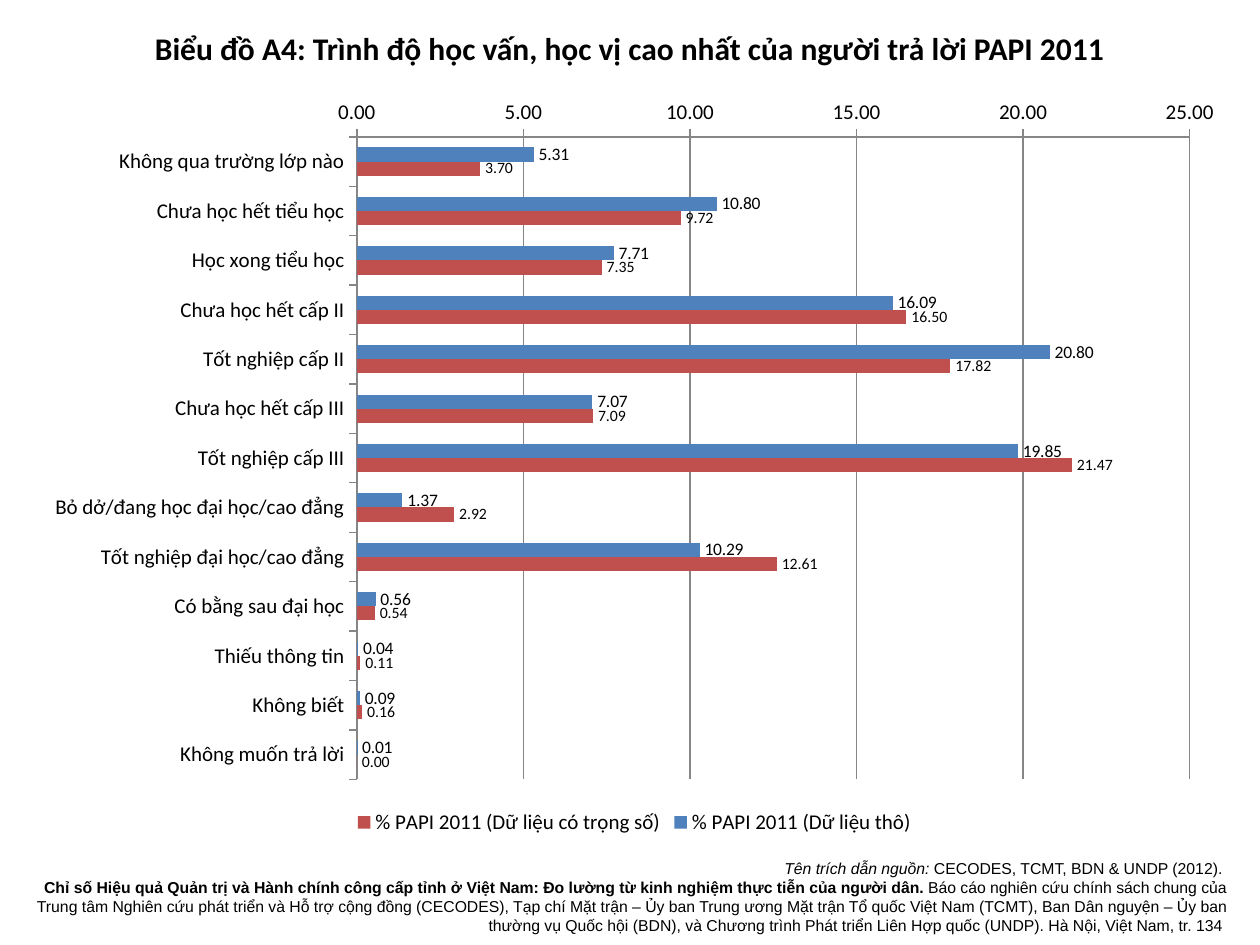
from lxml import etree
from pptx import Presentation
from pptx.chart.data import CategoryChartData
from pptx.dml.color import RGBColor
from pptx.enum.chart import XL_CHART_TYPE as CT, XL_LABEL_POSITION as LP
from pptx.enum.chart import XL_LEGEND_POSITION as LEG, XL_TICK_MARK as TM
from pptx.enum.text import MSO_AUTO_SIZE, PP_ALIGN
from pptx.oxml import parse_xml
from pptx.oxml.ns import nsdecls, qn
from pptx.util import Emu, Pt

PX = 914400 // 126
COLORS = {"text": "000000", "raw": "4F81BD", "weighted": "C0504D", "axis": "868686"}


def color(name):
    return RGBColor.from_string(COLORS[name])


def add_text(box, size, font, align, runs):
    s = slide.shapes.add_textbox(*[Emu(v * PX) for v in box])
    tf = s.text_frame
    tf.word_wrap = True
    tf.auto_size = MSO_AUTO_SIZE.SHAPE_TO_FIT_TEXT
    p = tf.paragraphs[0]
    p.alignment = align
    p.font.size = Pt(size)
    p.font.name = font
    p.font.color.rgb = color("text")
    for text, bold, italic, line_break in runs:
        r = p.add_run()
        r.text = text
        r.font.bold = bold
        r.font.italic = italic
        if line_break:
            p.add_line_break()


prs = Presentation()
prs.slide_width = Emu(1260 * PX)
prs.slide_height = Emu(945 * PX)
slide = prs.slides.add_slide(prs.slide_layouts[6])

add_text((84, 23, 1092, 50), 18, "Calibri", PP_ALIGN.CENTER, [
    ("Biểu đồ A4: Trình độ học vấn, học vị cao nhất của người trả lời PAPI 2011", True, False, False),
])

rows = [
    ("Không qua trường lớp nào", 5.31, 3.70),
    ("Chưa học hết tiểu học", 10.80, 9.72),
    ("Học xong tiểu học", 7.71, 7.35),
    ("Chưa học hết cấp II", 16.09, 16.50),
    ("Tốt nghiệp cấp II", 20.80, 17.82),
    ("Chưa học hết cấp III", 7.07, 7.09),
    ("Tốt nghiệp cấp III", 19.85, 21.47),
    ("Bỏ dở/đang học đại học/cao đẳng", 1.37, 2.92),
    ("Tốt nghiệp đại học/cao đẳng", 10.29, 12.61),
    ("Có bằng sau đại học", 0.56, 0.54),
    ("Thiếu thông tin", 0.04, 0.11),
    ("Không biết", 0.09, 0.16),
    ("Không muốn trả lời", 0.01, 0.00),
]
levels, raw, weighted = zip(*rows)
data = CategoryChartData(number_format="0.00")
data.categories = levels
data.add_series("% PAPI 2011 (Dữ liệu thô)", raw)
data.add_series("% PAPI 2011 (Dữ liệu có trọng số)", weighted)

chart_box = [Emu(v * PX) for v in (31, 84, 1207, 756)]
chart = slide.shapes.add_chart(CT.BAR_CLUSTERED, *chart_box, data).chart
chart.has_title = False
chart.font.size = Pt(12)
chart.font.name = "Calibri"
chart.font.color.rgb = color("text")
chart.has_legend = True
chart.legend.position = LEG.BOTTOM
chart.legend.include_in_layout = False

cat_axis, val_axis = chart.category_axis, chart.value_axis
cat_axis.reverse_order = True
val_axis.minimum_scale = 0
val_axis.maximum_scale = 25
val_axis.major_unit = 5
val_axis.has_major_gridlines = True
val_axis.tick_labels.number_format = "0.00"
val_axis.tick_labels.number_format_is_linked = False
for axis in (cat_axis, val_axis):
    axis.major_tick_mark = TM.OUTSIDE
    axis.minor_tick_mark = TM.NONE
for line in (cat_axis.format.line, val_axis.format.line, val_axis.major_gridlines.format.line):
    line.color.rgb = color("axis")
    line.width = Pt(0.75)

plot = chart.plots[0]
plot.gap_width = 150
plot.overlap = 0
plot.vary_by_categories = False
for series, name, size in zip(plot.series, ("raw", "weighted"), (10, 9)):
    series.invert_if_negative = False
    series.format.fill.solid()
    series.format.fill.fore_color.rgb = color(name)
    labels = series.data_labels
    labels.show_value = True
    labels.position = LP.OUTSIDE_END
    labels.number_format = "0.00"
    labels.number_format_is_linked = False
    labels.font.size = Pt(size)
    labels.font.name = "Calibri"
    labels.font.color.rgb = color("text")

plot_area = chart.element.find(".//" + qn("c:plotArea"))
for old in plot_area.findall(qn("c:layout")):
    plot_area.remove(old)
layout = parse_xml(f"<c:layout {nsdecls('c')}><c:manualLayout/></c:layout>")
settings = [("layoutTarget", "inner"), ("xMode", "edge"), ("yMode", "edge"),
            ("x", "0.27"), ("y", "0.07"), ("w", "0.69"), ("h", "0.85")]
for tag, value in settings:
    etree.SubElement(layout[0], qn("c:" + tag)).set("val", value)
plot_area.insert(0, layout)

add_text((21, 853, 1218, 89), 9, "Arial", PP_ALIGN.RIGHT, [
    ("Tên trích dẫn nguồn:", False, True, False),
    (" CECODES, TCMT, BDN & UNDP (2012). ", False, False, True),
    ("Chỉ số Hiệu quả Quản trị và Hành chính công cấp tỉnh ở Việt Nam: "
     "Đo lường từ kinh nghiệm thực tiễn của người dân. ", True, False, False),
    ("Báo cáo nghiên cứu chính sách chung của Trung tâm Nghiên cứu phát triển và Hỗ trợ "
     "cộng đồng (CECODES), Tạp chí Mặt trận – Ủy ban Trung ương Mặt trận Tổ quốc Việt Nam "
     "(TCMT), Ban Dân nguyện – Ủy ban thường vụ Quốc hội (BDN), và Chương trình Phát triển "
     "Liên Hợp quốc (UNDP). Hà Nội, Việt Nam, tr. 134 ", False, False, False),
])

prs.save("out.pptx")
